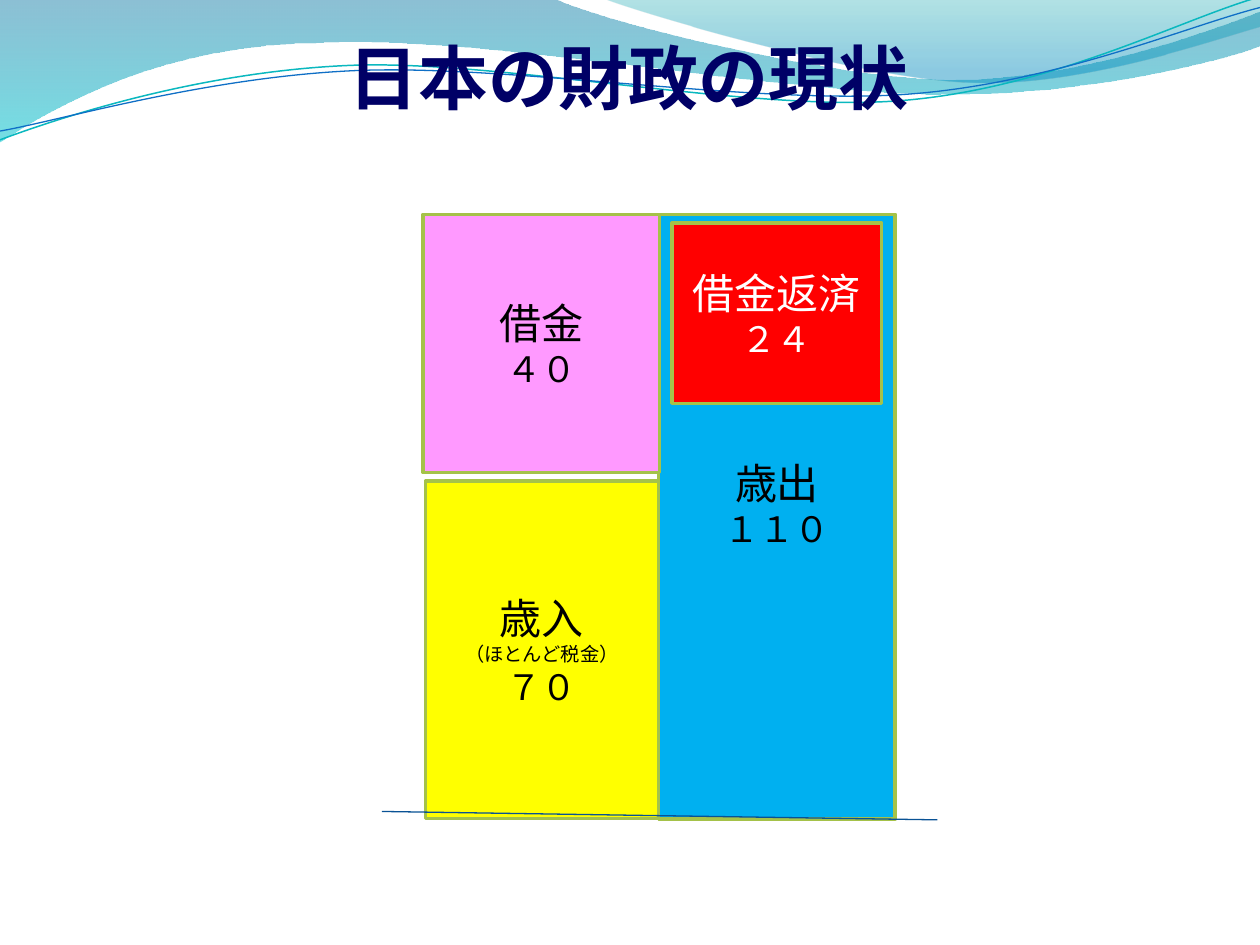
from dataclasses import dataclass
from math import cos, radians, sin

from lxml.etree import SubElement
from pptx import Presentation
from pptx.dml.color import RGBColor
from pptx.enum.shapes import MSO_CONNECTOR as Connector, MSO_SHAPE as Preset
from pptx.enum.text import MSO_ANCHOR as Anchor, PP_ALIGN as Align
from pptx.oxml.ns import qn
from pptx.util import Pt

HEADING_FONT = "Noto Sans CJK JP"
BODY_FONT = "Vollkorn"
BLACK, WHITE, BORDER = "000000", "FFFFFF", "A5C249"
STRAND_TILT = -2.7
STRAND_CENTER = (359.3, 41.6)

Point = tuple[float, float]


@dataclass
class Block:
    left: float
    top: float
    width: float
    height: float
    fill: str
    lines: list[tuple[str, float]]
    color: str = BLACK
    bottom_inset: float = 3.6


@dataclass
class Wave:
    """A path whose one-point segments are lines and three-point ones Bézier curves."""
    start: Point
    segments: list[list[Point]]


@dataclass
class Stop:
    position: float
    color: str
    opacity: int


BLOCKS = [
    Block(243.1, 275, 133.2, 192.7, "FFFF00",
          [("歳入", 24), ("（ほとんど税金）", 11), ("７０", 20)]),
    Block(376.4, 122.5, 135.2, 345.6, "00B0F0",
          [("歳出", 24), ("１１０", 20)], bottom_inset=19),
    Block(241.7, 122.5, 135.2, 147.5, "FF99FF", [("借金", 24), ("４０", 20)]),
]
REPAYMENT = Block(384, 127.5, 119.8, 103, "FF0000",
                  [("借金返済", 24), ("２４", 20)], color=WHITE)

BANDS = [
    (Wave((0, -0.7), [
        [(316.8, -0.7)],
        [(342.7, 12.2), (478.1, 45.4), (545.8, 45.4)],
        [(614.2, 45.4), (689.8, 18.7), (720, 6.5)],
        [(720.7, 25.9)],
        [(707.8, 31.7), (626.4, 54.7), (537.1, 54)],
        [(447.8, 54), (275, 20.2), (185, 24.5)],
        [(92.9, 25.2), (33.1, 59.8), (-0.7, 81.4)],
        [(0, -0.7)]]),
     [Stop(0, "0074A1", 45), Stop(1, "00C6CF", 55)]),
    (Wave((344.9, -0.7), [
        [(366.5, 7.9), (491, 44.6), (553.7, 46.8)],
        [(616.3, 49.7), (691.9, 23), (720, 15.1)],
        [(720, 0)],
        [(344.9, -0.7)]]),
     [Stop(0, "00A1A9", 30), Stop(0.8, "008BBF", 45)]),
]
STRANDS = [
    (Wave((0, 79.9), [
        [(34.6, 67), (113.8, 41), (199.4, 37.4)],
        [(284.4, 33.8), (427, 64.1), (513.4, 57.6)],
        [(599.8, 51.1), (675.4, 10.8), (718.6, -1.4)]]), "0AB8BF", 0.85),
    (Wave((0, 74.9), [
        [(33.8, 69.1), (118.1, 43.9), (203.8, 40.3)],
        [(290.2, 36.7), (429.8, 59.8), (516.2, 54)],
        [(601.9, 48.2), (677.5, 15.1), (720, 4.3)]]), "0F6FC6", 0.75),
]


def rgb(color: str) -> RGBColor:
    return RGBColor.from_string(color)


def set_line(shape, color: str, width: float) -> None:
    shape.line.color.rgb = rgb(color)
    shape.line.width = Pt(width)


def write_text(paragraph, text: str, *, size: float, color: str, font: str, bold=False):
    paragraph.alignment = Align.CENTER
    run = paragraph.add_run()
    run.text = text
    run.font.size = Pt(size)
    run.font.name = font
    run.font.bold = bold
    run.font.color.rgb = rgb(color)
    return run


def turn(point: Point, degrees: float) -> Point:
    """Turn a point clockwise about the centre of the strands."""
    center_x, center_y = STRAND_CENTER
    x, y = point[0] - center_x, point[1] - center_y
    c, s = cos(radians(degrees)), sin(radians(degrees))
    return center_x + x * c - y * s, center_y + x * s + y * c


def draw_wave(slide, wave: Wave, *, rotation: float = 0):
    """Draw all points as line ends, then join each three-point segment into a curve."""
    def place(point: Point):
        return tuple(Pt(value) for value in turn(point, -rotation))

    builder = slide.shapes.build_freeform(*place(wave.start))
    points = [place(point) for segment in wave.segments for point in segment]
    builder.add_line_segments(points, close=False)
    shape = builder.convert_to_shape()
    lines = list(shape._element.iter(qn("a:lnTo")))
    for segment in wave.segments:
        group, lines = lines[:len(segment)], lines[len(segment):]
        if len(group) == 3:
            group[0].tag = qn("a:cubicBezTo")
            for line in group[1:]:
                group[0].append(line[0])
                line.getparent().remove(line)
    shape.rotation = rotation
    shape.shadow.inherit = False
    return shape


def draw_band(slide, wave: Wave, stops: list[Stop]) -> None:
    shape = draw_wave(slide, wave)
    SubElement(next(shape._element.iter(qn("a:path"))), qn("a:close"))
    shape.line.fill.background()
    shape.fill.gradient()
    shape.fill.gradient_angle = 270
    for gradient_stop, stop in zip(shape.fill.gradient_stops, stops):
        gradient_stop.position = stop.position
        gradient_stop.color.rgb = rgb(stop.color)
    colors = shape._element.spPr.find(qn("a:gradFill")).iter(qn("a:srgbClr"))
    for color, stop in zip(list(colors), stops):
        SubElement(color, qn("a:alpha"), val=str(stop.opacity * 1000))


def draw_strand(slide, wave: Wave, color: str, width: float) -> None:
    shape = draw_wave(slide, wave, rotation=STRAND_TILT)
    shape.fill.background()
    set_line(shape, color, width)


def draw_title(slide, text: str) -> None:
    box = slide.shapes.add_textbox(Pt(0.7), Pt(15.1), Pt(717.1), Pt(56.9))
    frame = box.text_frame
    frame.word_wrap = True
    frame.vertical_anchor = Anchor.MIDDLE
    run = write_text(frame.paragraphs[0], text, size=40, color="000066",
                     font=HEADING_FONT, bold=True)
    properties = run.font._element
    SubElement(properties, qn("a:ea"), typeface=HEADING_FONT)
    outline = SubElement(properties, qn("a:ln"), w=str(Pt(0.5)))
    SubElement(SubElement(outline, qn("a:solidFill")), qn("a:srgbClr"), val=WHITE)
    properties.insert(0, outline)


def draw_block(slide, block: Block) -> None:
    shape = slide.shapes.add_shape(Preset.RECTANGLE, Pt(block.left), Pt(block.top),
                                   Pt(block.width), Pt(block.height))
    shape.shadow.inherit = False
    shape.fill.solid()
    shape.fill.fore_color.rgb = rgb(block.fill)
    set_line(shape, BORDER, 2)
    frame = shape.text_frame
    frame.word_wrap = True
    frame.vertical_anchor = Anchor.MIDDLE
    frame.margin_bottom = Pt(block.bottom_inset)
    for index, (text, size) in enumerate(block.lines):
        paragraph = frame.add_paragraph() if index else frame.paragraphs[0]
        write_text(paragraph, text, size=size, color=block.color, font=BODY_FONT)


def draw_baseline(slide) -> None:
    line = slide.shapes.add_connector(Connector.STRAIGHT, Pt(218.2), Pt(463.7),
                                      Pt(535.7), Pt(468.5))
    set_line(line, "095295", 0.75)
    SubElement(line._element.spPr, qn("a:effectLst"))


def main() -> None:
    presentation = Presentation()
    presentation.slide_width, presentation.slide_height = Pt(720), Pt(540)
    slide = presentation.slides.add_slide(presentation.slide_layouts[6])
    for band in BANDS:
        draw_band(slide, *band)
    for strand in STRANDS:
        draw_strand(slide, *strand)
    draw_title(slide, "日本の財政の現状")
    for block in BLOCKS:
        draw_block(slide, block)
    draw_baseline(slide)
    draw_block(slide, REPAYMENT)
    presentation.save("out.pptx")


if __name__ == "__main__":
    main()
